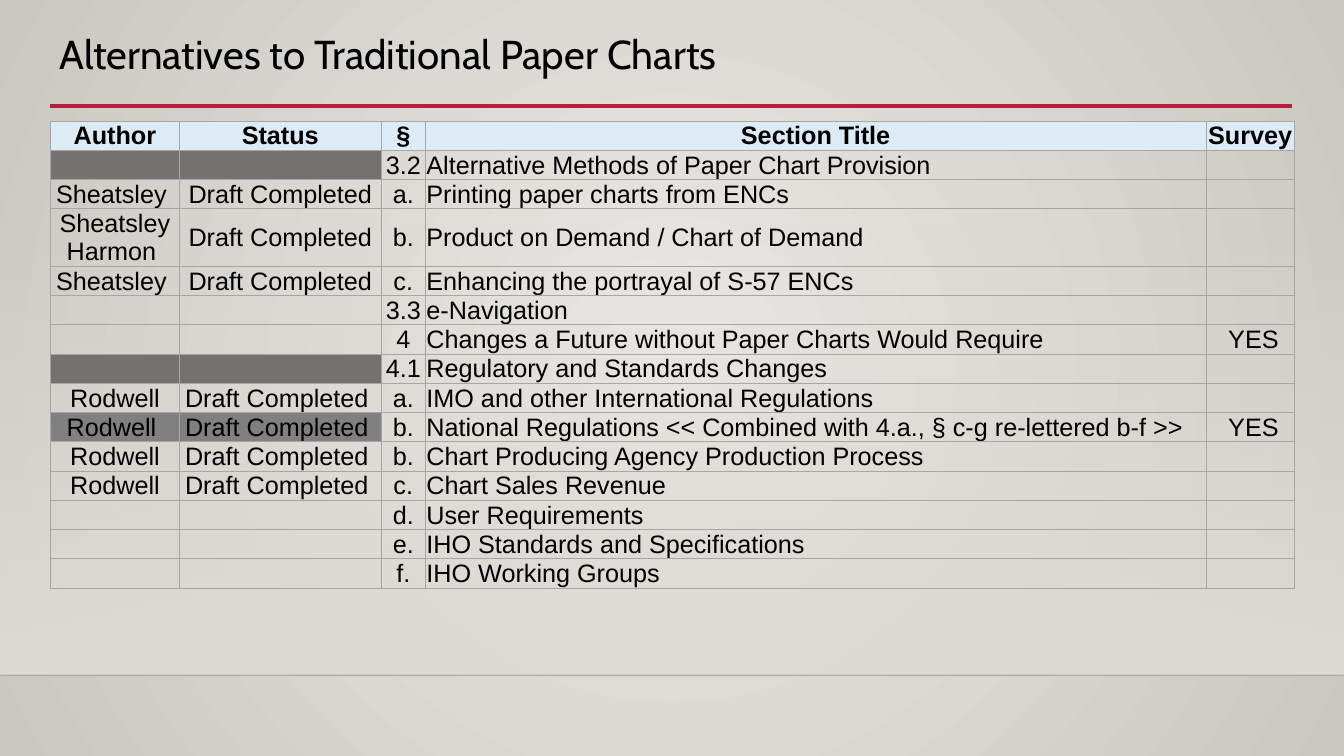
from dataclasses import dataclass

from lxml import etree
from pptx import Presentation
from pptx.dml.color import RGBColor
from pptx.enum.shapes import MSO_CONNECTOR, MSO_SHAPE
from pptx.enum.text import MSO_ANCHOR, MSO_AUTO_SIZE, PP_ALIGN
from pptx.oxml.ns import qn
from pptx.util import Inches, Pt

STRAIGHT = MSO_CONNECTOR.STRAIGHT
RECT = MSO_SHAPE.RECTANGLE
MIDDLE = MSO_ANCHOR.MIDDLE
NO_FIT = MSO_AUTO_SIZE.NONE
LEFT, CENTER = PP_ALIGN.LEFT, PP_ALIGN.CENTER


@dataclass(frozen=True)
class Theme:
    bg_center: str = "ECEAE7"
    bg_edge: str = "CAC7C1"
    floor: str = "DFDBD5"
    floor_line: str = "000001"
    accent: str = "B71E42"
    text: str = "000000"
    header: str = "DDEBF7"
    group: str = "757171"
    merged: str = "808080"
    border: str = "A6A6A6"
    title_font: str = "Cabin"
    body_font: str = "Arial"
    title_size: float = 28.8
    body_size: int = 18


THEME = Theme()
TITLE = "Alternatives to Traditional Paper Charts"
COLUMN_WIDTHS = (1.28, 2, 0.44, 7.74, 0.88)
TITLE_COLUMN = 3
HEADINGS = ("Author", "Status", "§", "Section Title", "Survey")
DONE = "Draft Completed"
DONE_NB = "Draft Completed "
SECTIONS = (
    ("", "", "3.2", "Alternative Methods of Paper Chart Provision", ""),
    ("Sheatsley ", DONE, "a.", "Printing paper charts from ENCs", ""),
    ("Sheatsley\nHarmon ", DONE, "b.", "Product on Demand / Chart of Demand", ""),
    ("Sheatsley ", DONE, "c.", "Enhancing the portrayal of S-57 ENCs", ""),
    ("", "", "3.3", "e-Navigation", ""),
    ("", "", "4", "Changes a Future without Paper Charts Would Require", " YES"),
    ("", "", "4.1", "Regulatory and Standards Changes", ""),
    ("Rodwell", DONE_NB, "a.", "IMO and other International Regulations", ""),
    ("Rodwell ", DONE_NB, "b.",
     "National Regulations << Combined with 4.a., § c-g re-lettered b-f >>", " YES"),
    ("Rodwell", DONE_NB, "b.", "Chart Producing Agency Production Process", ""),
    ("Rodwell", DONE_NB, "c.", "Chart Sales Revenue", ""),
    ("", "", "d.", "User Requirements", ""),
    ("", "", "e.", "IHO Standards and Specifications", ""),
    ("", "", "f.", "IHO Working Groups", ""),
)
# Fill of the author and status cells, by table row
ROW_FILLS = {1: THEME.group, 7: THEME.group, 9: THEME.merged}


def rgb(color):
    return RGBColor.from_string(color)


def set_alpha(color_element, percent):
    etree.SubElement(color_element, qn("a:alpha"), val=str(percent * 1000))


def set_gradient(fill, start, end):
    fill.gradient()
    for stop, color, position in zip(fill.gradient_stops, (start, end), (0, 1)):
        stop.color.rgb = rgb(color)
        stop.position = position


def format_font(font, name, size, bold=False):
    font.name = name
    font.size = Pt(size)
    font.bold = bold
    font.color.rgb = rgb(THEME.text)


def add_rule(slide, left, top, width, color, weight):
    line = slide.shapes.add_connector(
        STRAIGHT, Inches(left), Inches(top), Inches(left + width), Inches(top))
    line.line.color.rgb = rgb(color)
    line.line.width = Pt(weight)
    etree.SubElement(line._element.spPr, qn("a:effectLst"))
    return line


def add_backdrop(slide, left, top, width, height):
    # Radial background
    set_gradient(slide.background.fill, THEME.bg_center, THEME.bg_edge)
    grad = slide._element.find(".//" + qn("p:bgPr")).find(qn("a:gradFill"))
    linear = grad.find(qn("a:lin"))
    radial = etree.Element(qn("a:path"), path="circle")
    etree.SubElement(radial, qn("a:fillToRect"), l="50000", t="50000", r="50000", b="50000")
    grad.replace(linear, radial)

    # Wall fading in towards the floor line
    wall = slide.shapes.add_shape(
        RECT, Inches(left), Inches(top), Inches(width), Inches(height))
    wall.shadow.inherit = False
    wall.line.fill.background()
    set_gradient(wall.fill, THEME.floor, THEME.floor)
    wall.fill.gradient_angle = 270
    set_alpha(wall._element.spPr.find(".//" + qn("a:srgbClr")), 0)

    floor = add_rule(slide, left, top + height, width, THEME.floor_line, 1)
    set_alpha(floor._element.spPr.find(".//" + qn("a:srgbClr")), 20)


def add_title(slide, left, top, width, height):
    title = slide.shapes.title
    title.left, title.top = Inches(left), Inches(top)
    title.width, title.height = Inches(width), Inches(height)
    tf = title.text_frame
    tf.text = TITLE
    tf.word_wrap = True
    tf.auto_size = NO_FIT
    tf.vertical_anchor = MIDDLE
    p = tf.paragraphs[0]
    p.alignment = LEFT
    p.line_spacing = 0.9
    format_font(p.runs[0].font, THEME.title_font, THEME.title_size)


def add_borders(cell):
    tc_pr = cell._tc.get_or_add_tcPr()
    for index, side in enumerate(("a:lnL", "a:lnR", "a:lnT", "a:lnB")):
        line = etree.Element(qn(side), w=str(Pt(0.5)))
        fill = etree.SubElement(line, qn("a:solidFill"))
        etree.SubElement(fill, qn("a:srgbClr"), val=THEME.border)
        tc_pr.insert(index, line)


def format_cell(cell, text, fill, alignment, bold):
    cell.margin_left = cell.margin_right = cell.margin_top = Inches(0.01)
    cell.margin_bottom = 0
    cell.vertical_anchor = MIDDLE
    if fill:
        cell.fill.solid()
        cell.fill.fore_color.rgb = rgb(fill)
    else:
        cell.fill.background()
    add_borders(cell)
    cell.text_frame.text = text
    for p in cell.text_frame.paragraphs:
        p.alignment = alignment
        for r in p.runs:
            format_font(r.font, THEME.body_font, THEME.body_size, bold)
        if not p.runs:
            # An empty cell keeps the row height of the body type
            end = etree.SubElement(p._p, qn("a:endParaRPr"), sz=str(THEME.body_size * 100))
            etree.SubElement(end, qn("a:latin"), typeface=THEME.body_font)


def add_section_table(slide, left, top, row_height):
    rows = (HEADINGS,) + SECTIONS
    frame = slide.shapes.add_table(
        len(rows), len(HEADINGS), Inches(left), Inches(top),
        Inches(sum(COLUMN_WIDTHS)), Inches(row_height * len(rows)))
    table = frame.table
    table.first_row = table.horz_banding = False
    for column, width in zip(table.columns, COLUMN_WIDTHS):
        column.width = Inches(width)
    for i, values in enumerate(rows):
        table.rows[i].height = Inches(row_height)
        header = i == 0
        for j, text in enumerate(values):
            fill = THEME.header if header else ROW_FILLS.get(i) if j < 2 else None
            alignment = LEFT if j == TITLE_COLUMN and not header else CENTER
            format_cell(table.cell(i, j), text, fill, alignment, header)


def main():
    prs = Presentation()
    prs.slide_width, prs.slide_height = Inches(13.33), Inches(7.5)
    slide = prs.slides.add_slide(prs.slide_layouts[5])
    add_backdrop(slide, 0, 2.21, 13.33, 4.49)
    add_rule(slide, 0.5, 1.05, 12.31, THEME.accent, 2.5)
    add_title(slide, 0.49, 0.28, 10.5, 0.56)
    add_section_table(slide, 0.5, 1.2, 0.25)
    prs.save("out.pptx")


if __name__ == "__main__":
    main()
